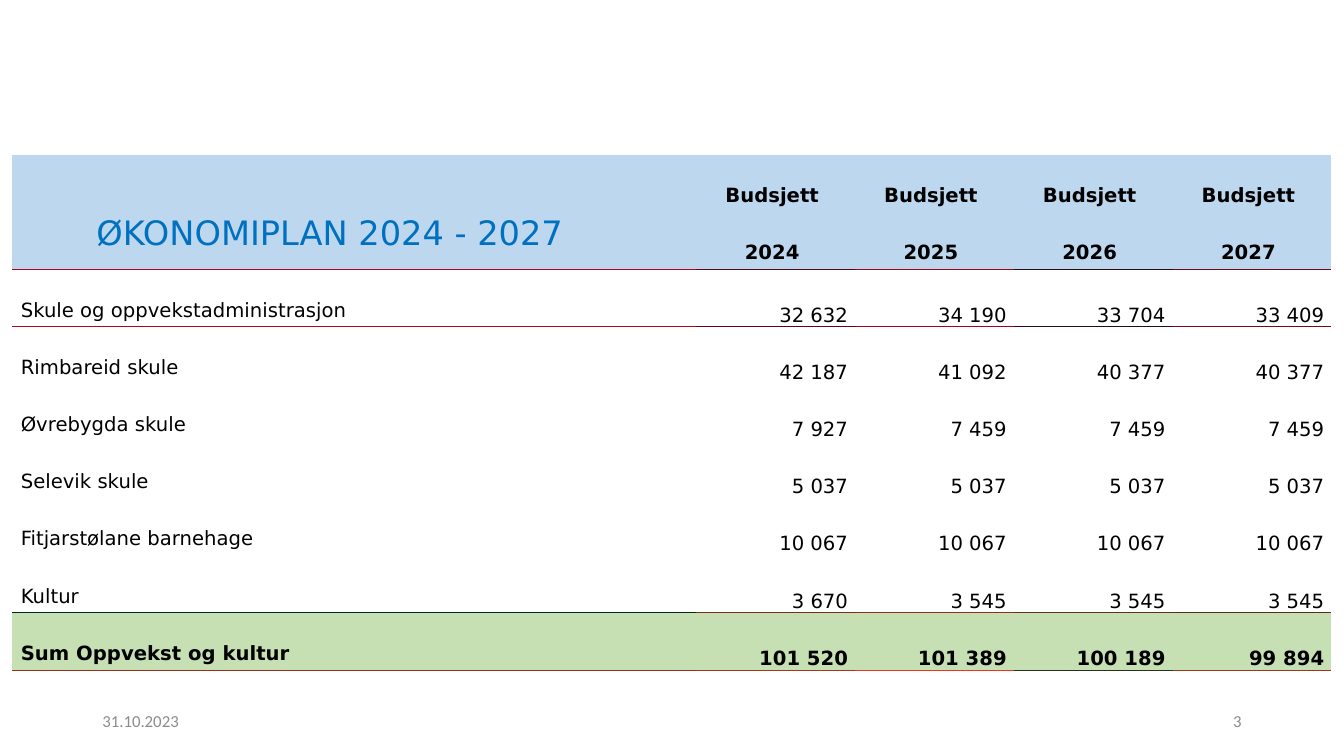
from lxml.etree import SubElement as Sub
from pptx import Presentation
from pptx.dml.color import RGBColor as RGB
from pptx.enum.text import MSO_ANCHOR as Anchor, PP_ALIGN as Align
from pptx.oxml import parse_xml
from pptx.oxml.ns import nsdecls, qn
from pptx.util import Inches, Pt

UNIT = Inches(13.33) / 16
COLORS = {"head": "BDD7EE", "sum": "C6E0B4", "title": "0070C0", "text": "000000", "foot": "8C8C8C"}
LINES = {
    1: ["A8081A", "58071A", "98061A", "280A1A", "700A1A"],
    7: ["002C1A", "782C1A", "902F1A", "682D1A", "582E1A"],
    8: ["982D1A", "A8321A", "F0321A", "28311A", "A0341A"],
}
PLAIN = "{2D5ABB26-0587-4C30-8999-92F81FD0307C}"
ROWS = [
    ["", "Budsjett", "Budsjett", "Budsjett", "Budsjett"],
    ["", "2024", "2025", "2026", "2027"],
    ["Skule og oppvekstadministrasjon", "32 632", "34 190", "33 704", "33 409"],
    ["Rimbareid skule", "42 187", "41 092", "40 377", "40 377"],
    ["Øvrebygda skule", "7 927", "7 459", "7 459", "7 459"],
    ["Selevik skule", "5 037", "5 037", "5 037", "5 037"],
    ["Fitjarstølane barnehage", "10 067", "10 067", "10 067", "10 067"],
    ["Kultur", "3 670", "3 545", "3 545", "3 545"],
    ["Sum Oppvekst og kultur", "101 520", "101 389", "100 189", "99 894"],
]


def grid(*spans):
    return [round(n * UNIT) for n in spans]


def write(frame, text, size=14, font="DejaVu Sans", color="text", bold=False, align=Align.LEFT):
    para = frame.paragraphs[0]
    para.alignment = align
    para.font.size = Pt(size)
    if text:
        run = para.add_run()
        run.text = text
        run.font.size, run.font.name, run.font.bold = Pt(size), font, bold
        run.font.color.rgb = RGB.from_string(COLORS[color])


def label(slide, box, text, anchor=Anchor.TOP, **style):
    frame = slide.shapes.add_textbox(*box).text_frame
    frame.word_wrap = True
    frame.vertical_anchor = anchor
    write(frame, text, **style)


def edge(cell, side, color):
    line = parse_xml(f'<a:{side} {nsdecls("a")} w="9525"/>')
    fill = Sub(line, qn("a:solidFill"))
    Sub(fill, qn("a:srgbClr"), val=color)
    cell._tc.get_or_add_tcPr().insert(0, line)


def style(cell, row, col):
    head, total = row < 2, row == len(ROWS) - 1
    if head or total:
        cell.fill.solid()
        cell.fill.fore_color.rgb = RGB.from_string(COLORS["head" if head else "sum"])
    else:
        cell.fill.background()
    value = col > 0 and not head
    pads = (0.01, 0.01, 0.07, 0) if value else (0.09, 0.05, 0.16, 0.05)
    cell.margin_left, cell.margin_top, cell.margin_right, cell.margin_bottom = map(Inches, pads)
    cell.vertical_anchor = Anchor.BOTTOM
    align = Align.CENTER if head else Align.RIGHT if value else Align.LEFT
    write(cell.text_frame, ROWS[row][col], bold=head or total, align=align)
    for side, line in (("lnB", row), ("lnT", row - 1)):
        if line in LINES:
            edge(cell, side, LINES[line][col])


def budget(slide, box):
    wide, high = box[2:]
    frame = slide.shapes.add_table(len(ROWS), len(ROWS[0]), *box)
    table = frame.table
    table.first_row = table.horz_banding = False
    table._tbl.tblPr.find(qn("a:tableStyleId")).text = PLAIN
    first, = grid(8.15)
    for col, part in enumerate(table.columns):
        part.width = (wide - first) // 4 if col else first
    for row, part in enumerate(table.rows):
        part.height = high // len(ROWS)
        for col, cell in enumerate(part.cells):
            style(cell, row, col)


def footer(slide, box):
    left, top, wide, high = box
    part, = grid(3.6)
    look = dict(anchor=Anchor.MIDDLE, size=12, font="Calibri", color="foot")
    label(slide, (left, top, part, high), "31.10.2023", **look)
    label(slide, (left + wide - part, top, part, high), "3", align=Align.RIGHT, **look)


def main():
    deck = Presentation()
    deck.slide_width, deck.slide_height = Inches(13.33), Inches(7.5)
    slide = deck.slides.add_slide(deck.slide_layouts[6])
    footer(slide, grid(1.1, 8.34, 13.8, 0.48))
    budget(slide, grid(0.14, 1.85, 15.71, 6.13))
    label(slide, grid(-0.37, 2.47, 8.59, 0.6), "ØKONOMIPLAN 2024 - 2027",
          size=24, color="title", align=Align.CENTER)
    deck.save("out.pptx")


if __name__ == "__main__":
    main()
